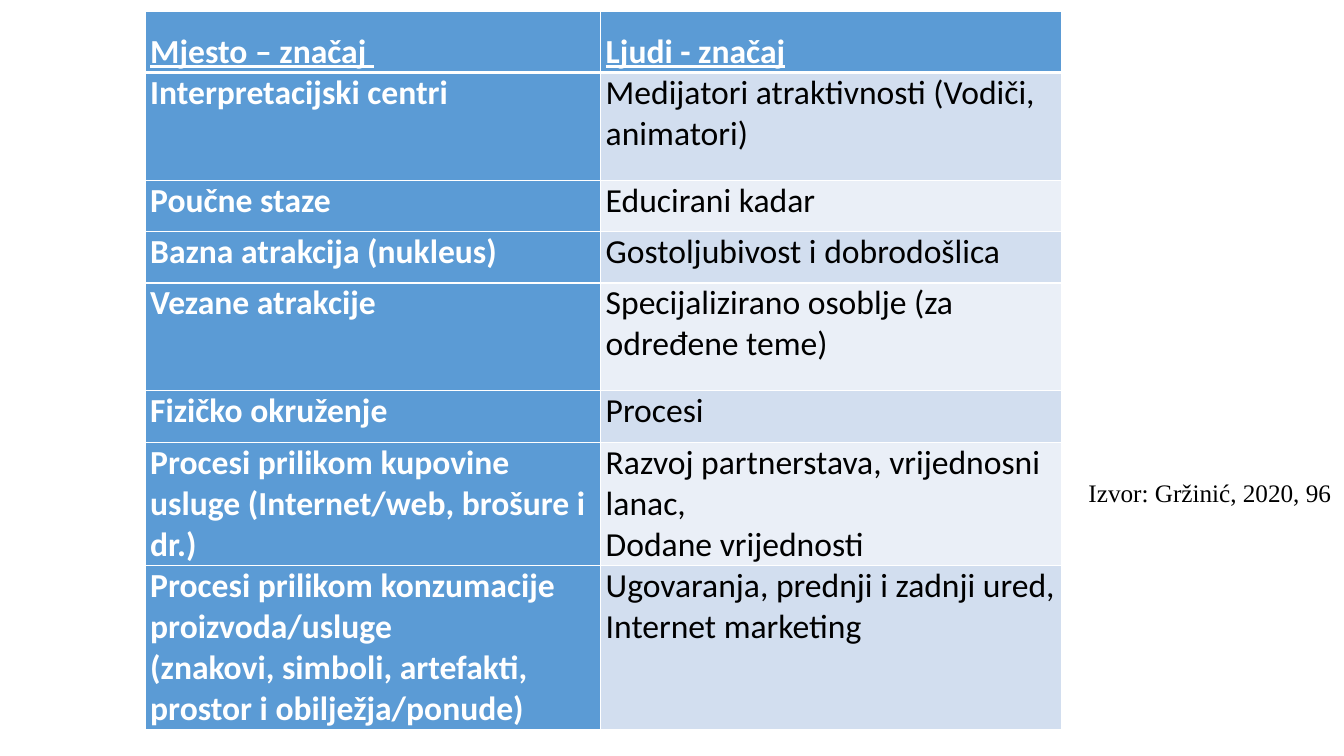
from lxml import etree
from pptx import Presentation
from pptx.dml.color import RGBColor
from pptx.enum.text import MSO_AUTO_SIZE
from pptx.oxml.ns import qn
from pptx.util import Pt

FIT_SHAPE = MSO_AUTO_SIZE.SHAPE_TO_FIT_TEXT
BLUE, WHITE, BLACK = "5B9BD5", "FFFFFF", "000000"
BANDS = ["EAEFF7", "D2DEEF"]
COLUMN_WIDTHS = [325.4, 329.1]
ROW_HEIGHTS = [36.7, 77, 36.7, 36.7, 77, 36.7, 85.7, 115.2]
ROWS = [
    ("Mjesto – značaj ", "Ljudi - značaj"),
    ("Interpretacijski centri", "Medijatori atraktivnosti (Vodiči, animatori)"),
    ("Poučne staze", "Educirani kadar"),
    ("Bazna atrakcija (nukleus)", "Gostoljubivost i dobrodošlica"),
    ("Vezane atrakcije", "Specijalizirano osoblje (za određene teme)"),
    ("Fizičko okruženje", "Procesi"),
    ("Procesi prilikom kupovine usluge (Internet/web, brošure i dr.)",
     "Razvoj partnerstava, vrijednosni lanac,\nDodane vrijednosti"),
    ("Procesi prilikom konzumacije proizvoda/usluge\n"
     "(znakovi, simboli, artefakti, prostor i obilježja/ponude)",
     "Ugovaranja, prednji i zadnji ured, Internet marketing"),
]


def write(frame, text, font="Calibri", size=24, color=BLACK, bold=False,
          underline=False, spacing=1.0):
    for index, line in enumerate(text.split("\n")):
        para = frame.paragraphs[0] if index == 0 else frame.add_paragraph()
        para.line_spacing = spacing
        span = para.add_run()
        span.text = line
        span.font.name = font
        span.font.size = Pt(size)
        span.font.bold = bold
        span.font.underline = underline
        span.font.color.rgb = RGBColor.from_string(color)


def add_border(cell, side, width):
    line = etree.SubElement(cell._tc.get_or_add_tcPr(), qn(f"a:ln{side}"), w=str(Pt(width)))
    fill = etree.SubElement(line, qn("a:solidFill"))
    etree.SubElement(fill, qn("a:srgbClr"), val=WHITE)


deck = Presentation()
deck.slide_width, deck.slide_height = Pt(960), Pt(540)
page = deck.slides.add_slide(deck.slide_layouts[6])

# Table of places and people
table = page.shapes.add_table(len(ROWS), 2, Pt(103.7), Pt(7.9),
                              Pt(sum(COLUMN_WIDTHS)), Pt(sum(ROW_HEIGHTS))).table
for column, width in zip(table.columns, COLUMN_WIDTHS):
    column.width = Pt(width)
for row, height in zip(table.rows, ROW_HEIGHTS):
    row.height = Pt(height)

for r, texts in enumerate(ROWS):
    for c, text in enumerate(texts):
        cell = table.cell(r, c)
        header = r == 0
        strong = header or c == 0
        cell.margin_left = cell.margin_right = Pt(3.6)
        cell.margin_top = cell.margin_bottom = Pt(0)
        # Heavier rule between the header and the body
        for side in "LRTB":
            heavy = (r, side) in [(0, "B"), (1, "T")]
            add_border(cell, side, 3 if heavy else 1)
        cell.fill.solid()
        cell.fill.fore_color.rgb = RGBColor.from_string(BLUE if strong else BANDS[r % 2])
        write(cell.text_frame, text, color=WHITE if strong else BLACK, bold=strong,
              underline=header, spacing=1.5 if header else 1.0)

# Source note
box = page.shapes.add_textbox(Pt(770.4), Pt(337.7), Pt(190), Pt(28.8))
box.text_frame.word_wrap = False
box.text_frame.auto_size = FIT_SHAPE
write(box.text_frame, "Izvor: Gržinić, 2020, 96", font="Times New Roman", size=18)

deck.save("out.pptx")
